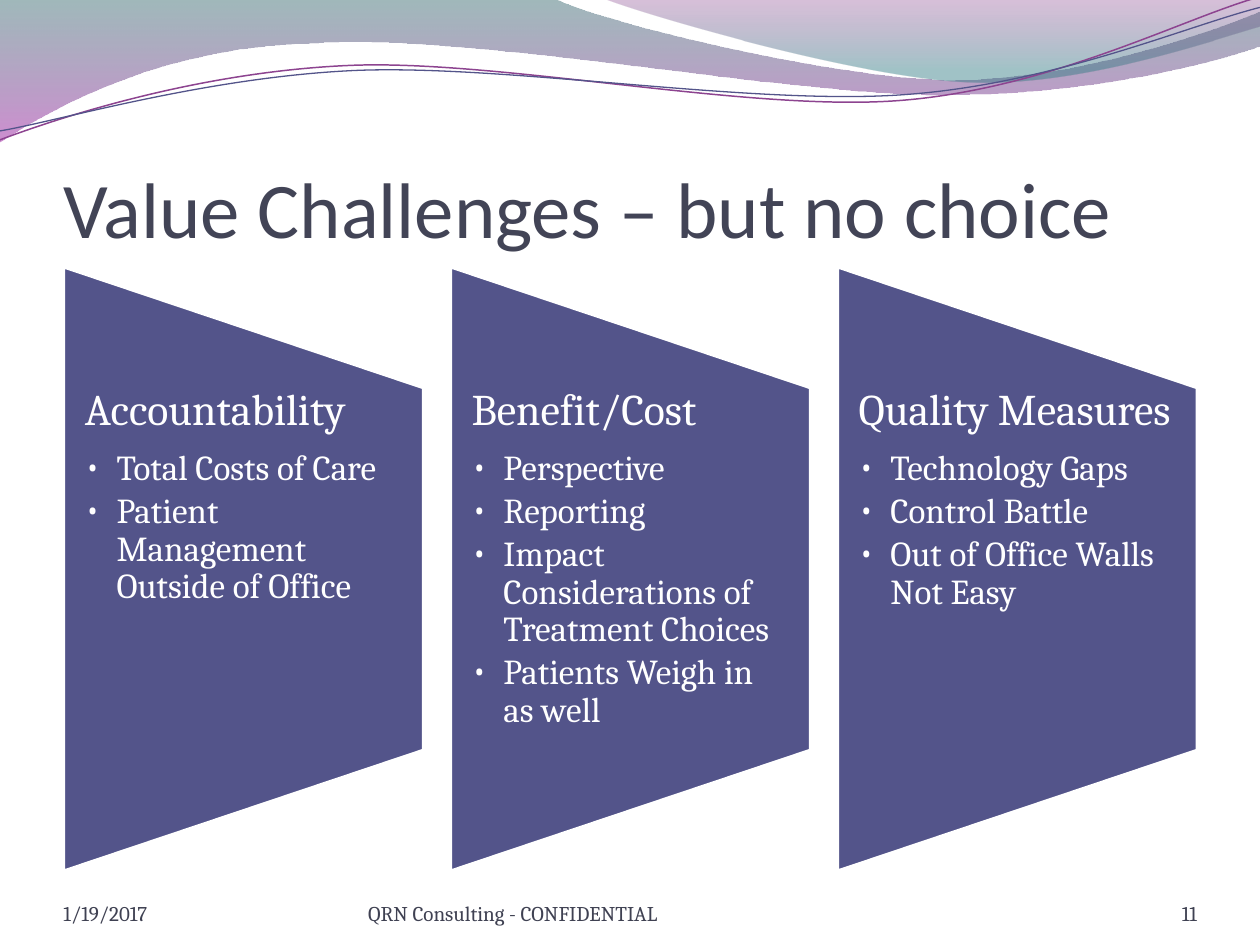
from dataclasses import dataclass

from lxml import etree
from pptx import Presentation
from pptx.dml.color import RGBColor
from pptx.enum.shapes import MSO_SHAPE
from pptx.enum.text import MSO_ANCHOR, PP_ALIGN
from pptx.oxml.ns import qn
from pptx.util import Cm, Pt

PANEL_SHAPE = MSO_SHAPE.FLOWCHART_MANUAL_OPERATION
TOP, BOTTOM = MSO_ANCHOR.TOP, MSO_ANCHOR.BOTTOM
LEFT, RIGHT = PP_ALIGN.LEFT, PP_ALIGN.RIGHT

HEADING_FONT, BODY_FONT = "Calibri", "Cambria"
WHITE, INDIGO, TITLE_COLOR, FOOTER_COLOR = "FFFFFF", "53548A", "424456", "3F4152"

MARGIN = 1.28
PANEL_WIDTH, PANEL_HEIGHT, PANEL_PITCH = 7.26, 12.19, 7.8
PANEL_CENTER = 11.47
PANEL_TEXT_TOP, PANEL_TEXT_HEIGHT = 7.81, 7.32
BULLET_INDENT = 0.64

Point = tuple[float, float]


@dataclass
class Stop:
    position: float
    color: str
    opacity: int


@dataclass
class Outline:
    start: Point
    segments: list[tuple[Point, ...]]


@dataclass
class Wave:
    outline: Outline
    stops: tuple[Stop, Stop]


@dataclass
class Strand:
    outline: Outline
    color: str
    weight: float


@dataclass
class Panel:
    heading: str
    items: list[str]


@dataclass
class Label:
    text: str
    left: float
    top: float
    width: float
    height: float
    size: int = 12
    font: str = BODY_FONT
    color: str = FOOTER_COLOR
    align: PP_ALIGN = LEFT
    inset_top: float = 0


WAVES = [
    Wave(
        Outline((0, 0), [
            ((11.18, -0.03),),
            ((12.09, 0.43), (16.87, 1.6), (19.25, 1.6)),
            ((21.67, 1.6), (24.33, 0.66), (25.4, 0.23)),
            ((25.43, 0.91),),
            ((24.97, 1.12), (22.1, 1.93), (18.95, 1.91)),
            ((15.8, 1.91), (9.7, 0.71), (6.53, 0.86)),
            ((3.28, 0.91), (1.17, 2.11), (-0.03, 2.87)),
        ]),
        (Stop(0, "2D6368", 45), Stop(1, "A530A9", 55)),
    ),
    Wave(
        Outline((12.17, -0.03), [
            ((12.93, 0.28), (17.32, 1.57), (19.53, 1.65)),
            ((21.74, 1.75), (24.41, 0.81), (25.4, 0.53)),
            ((25.4, 0),),
        ]),
        (Stop(0, "7F2F82", 30), Stop(0.8, "2F7B82", 45)),
    ),
]
STRANDS = [
    Strand(
        Outline((0, 2.82), [
            ((1.22, 2.36), (4.01, 1.45), (7.04, 1.32)),
            ((10.03, 1.19), (15.06, 2.26), (18.11, 2.03)),
            ((21.16, 1.8), (23.83, 0.38), (25.35, -0.05)),
        ]),
        "8D4490", 0.85,
    ),
    Strand(
        Outline((0, 2.64), [
            ((1.19, 2.44), (4.17, 1.55), (7.19, 1.42)),
            ((10.24, 1.3), (15.16, 2.13), (18.21, 1.91)),
            ((21.23, 1.7), (23.9, 0.53), (25.4, 0.15)),
        ]),
        INDIGO, 0.75,
    ),
]
PANELS = [
    Panel("Accountability", ["Total Costs of Care", "Patient Management Outside of Office"]),
    Panel("Benefit/Cost", ["Perspective", "Reporting",
                           "Impact Considerations of Treatment Choices",
                           "Patients Weigh in as well"]),
    Panel("Quality Measures", ["Technology Gaps", "Control Battle",
                               "Out of Office Walls Not Easy"]),
]
LABELS = [
    Label("Value Challenges – but no choice", MARGIN, 1.95, 22.86, 3.18,
          45, HEADING_FONT, TITLE_COLOR, inset_top=0.13),
    Label("1/19/2017", MARGIN, 17.65, 5.92, 1.02),
    Label("QRN Consulting - CONFIDENTIAL", 7.42, 17.65, 9.32, 1.02),
    Label("11", 22.02, 17.65, 2.11, 1.02, align=RIGHT),
]


def rgb(color: str) -> RGBColor:
    return RGBColor.from_string(color)


def bend_segments(shape, segments: list[tuple[Point, ...]]) -> None:
    lines = iter(list(shape.element.iter(qn("a:lnTo"))))
    for segment in segments:
        group = [next(lines) for _ in segment]
        if len(group) == 1:
            continue
        curve = etree.Element(qn("a:cubicBezTo"))
        group[0].addprevious(curve)
        for line in group:
            curve.append(line[0])
            line.getparent().remove(line)


def draw_outline(slide, outline: Outline, close: bool):
    builder = slide.shapes.build_freeform(*(Cm(value) for value in outline.start))
    points = [(Cm(x), Cm(y)) for segment in outline.segments for x, y in segment]
    builder.add_line_segments(points, close=close)
    shape = builder.convert_to_shape()
    bend_segments(shape, outline.segments)
    shape.shadow.inherit = False
    return shape


def draw_wave(slide, wave: Wave) -> None:
    shape = draw_outline(slide, wave.outline, True)
    shape.line.fill.background()
    shape.fill.gradient()
    shape.fill.gradient_angle = 270
    for target, stop in zip(shape.fill.gradient_stops, wave.stops):
        target.color.rgb = rgb(stop.color)
        target.position = stop.position
    for color, stop in zip(shape.element.iter(qn("a:srgbClr")), wave.stops):
        etree.SubElement(color, qn("a:alpha"), val=str(stop.opacity * 1000))


def draw_strand(slide, strand: Strand) -> None:
    shape = draw_outline(slide, strand.outline, False)
    shape.fill.background()
    shape.line.color.rgb = rgb(strand.color)
    shape.line.width = Pt(strand.weight)


def add_text_frame(slide, left: float, top: float, width: float, height: float,
                   insets: tuple[float, float, float], anchor: MSO_ANCHOR):
    box = slide.shapes.add_textbox(Cm(left), Cm(top), Cm(width), Cm(height))
    frame = box.text_frame
    frame.word_wrap = True
    frame.vertical_anchor = anchor
    frame.margin_left, frame.margin_top, frame.margin_right = map(Cm, insets)
    frame.margin_bottom = Cm(0)
    return frame


def write(para, text: str, size: int, font: str, color: str) -> None:
    para.text = text
    para.font.size = Pt(size)
    para.font.name = font
    para.font.color.rgb = rgb(color)


def add_bullet(para) -> None:
    properties = para._p.get_or_add_pPr()
    properties.set("marL", str(Cm(BULLET_INDENT)))
    properties.set("indent", str(-Cm(BULLET_INDENT)))
    defaults = properties.find(qn("a:defRPr"))
    defaults.addprevious(etree.Element(qn("a:buFont"), typeface=BODY_FONT))
    defaults.addprevious(etree.Element(qn("a:buChar"), char="•"))


def draw_panel(slide, panel: Panel, left: float) -> None:
    shape = slide.shapes.add_shape(
        PANEL_SHAPE, Cm(left + (PANEL_WIDTH - PANEL_HEIGHT) / 2),
        Cm(PANEL_CENTER - PANEL_WIDTH / 2), Cm(PANEL_HEIGHT), Cm(PANEL_WIDTH))
    shape.rotation = 270
    shape.shadow.inherit = False
    shape.fill.solid()
    shape.fill.fore_color.rgb = rgb(INDIGO)
    shape.line.color.rgb = rgb(WHITE)
    shape.line.width = Pt(2)
    frame = add_text_frame(slide, left, PANEL_TEXT_TOP, PANEL_WIDTH, PANEL_TEXT_HEIGHT,
                           (0.43, 0, 0.46), TOP)
    heading = frame.paragraphs[0]
    write(heading, panel.heading, 25, BODY_FONT, WHITE)
    heading.space_after = Pt(8.75)
    for item in panel.items:
        para = frame.add_paragraph()
        para.level = 1
        write(para, item, 20, BODY_FONT, WHITE)
        para.space_after = Pt(3)
        add_bullet(para)
    for para in frame.paragraphs:
        para.line_spacing = 0.9


def draw_label(slide, label: Label) -> None:
    frame = add_text_frame(slide, label.left, label.top, label.width, label.height,
                           (0, label.inset_top, 0), BOTTOM)
    para = frame.paragraphs[0]
    write(para, label.text, label.size, label.font, label.color)
    para.alignment = label.align


def main() -> None:
    deck = Presentation()
    deck.slide_width, deck.slide_height = Cm(25.4), Cm(19.05)
    slide = deck.slides.add_slide(deck.slide_layouts[6])
    for wave in WAVES:
        draw_wave(slide, wave)
    for strand in STRANDS:
        draw_strand(slide, strand)
    for index, panel in enumerate(PANELS):
        draw_panel(slide, panel, MARGIN + index * PANEL_PITCH)
    for label in LABELS:
        draw_label(slide, label)
    deck.save("out.pptx")


if __name__ == "__main__":
    main()
